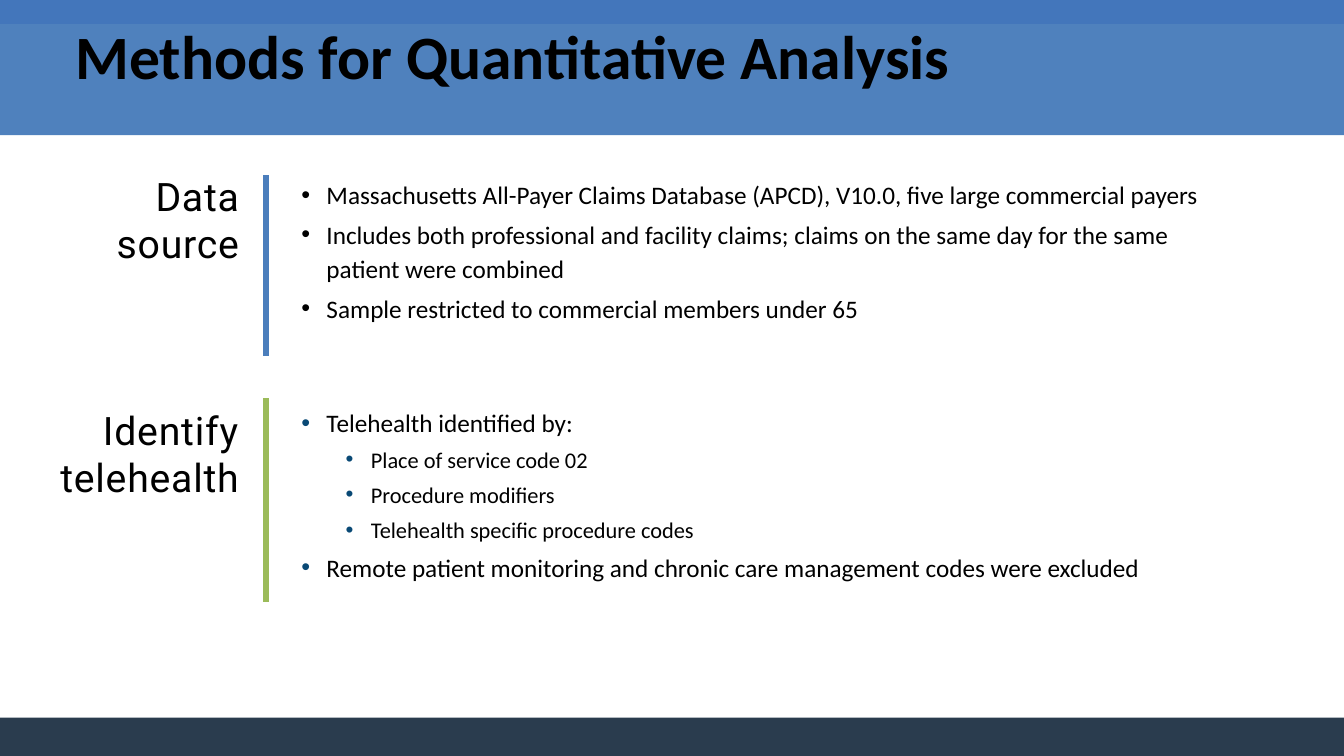
from dataclasses import dataclass

from lxml.etree import SubElement
from pptx import Presentation
from pptx.dml.color import RGBColor
from pptx.enum.shapes import MSO_CONNECTOR, MSO_SHAPE
from pptx.enum.text import MSO_ANCHOR, PP_ALIGN
from pptx.oxml.ns import qn
from pptx.util import Inches, Pt

SLIDE_WIDTH, SLIDE_HEIGHT = Inches(13.33), Inches(7.5)


@dataclass(frozen=True)
class Theme:
    top_band: str = "4376BB"
    title_band: str = "4F81BD"
    footer: str = "2A3C4E"
    text: str = "000000"
    bullet: str = "094975"
    source_rule: str = "4B7EBC"
    telehealth_rule: str = "9BBB59"
    body_font: str = "Calibri"
    label_font: str = "Roboto"
    title_size: int = 44
    label_size: int = 28
    body_sizes: tuple = (18, 16)
    rule_width: float = 4.5


THEME = Theme()
BODY_LEFT, BODY_WIDTH = 21.68, 70.1
RULE_X = 19.8
LABEL_RIGHT, LABEL_HEIGHT = 18.53, 13.87
BULLET_INDENTS = (0.25, 0.69)
BULLET_HANG = 0.25


def across(percent):
    return round(SLIDE_WIDTH * percent / 100)


def down(percent):
    return round(SLIDE_HEIGHT * percent / 100)


def add_band(slide, top, height, color):
    shape = slide.shapes.add_shape(
        MSO_SHAPE.RECTANGLE, 0, down(top), SLIDE_WIDTH, down(height))
    shape.shadow.inherit = False
    shape.fill.solid()
    shape.fill.fore_color.rgb = RGBColor.from_string(color)
    shape.line.fill.background()


def add_text_frame(slide, left, top, width, height):
    """Add a wrapping text box placed in percent of the slide."""
    box = slide.shapes.add_textbox(
        across(left), down(top), across(width), down(height))
    box.text_frame.word_wrap = True
    return box.text_frame


def add_paragraphs(frame, texts, font_name, size, bold=False):
    """Write one run per paragraph and return the paragraphs."""
    for index, text in enumerate(texts):
        paragraph = frame.add_paragraph() if index else frame.paragraphs[0]
        run = paragraph.add_run()
        run.text = text
        run.font.name = font_name
        run.font.size = Pt(size)
        run.font.bold = bold
        run.font.color.rgb = RGBColor.from_string(THEME.text)
    return frame.paragraphs


def add_title(slide, text):
    frame = add_text_frame(slide, 4.88, 0.8, 90, 12.8)
    frame.vertical_anchor = MSO_ANCHOR.MIDDLE
    add_paragraphs(frame, [text], THEME.body_font, THEME.title_size, bold=True)


def add_label(slide, left, top, lines):
    frame = add_text_frame(slide, left, top, LABEL_RIGHT - left, LABEL_HEIGHT)
    for paragraph in add_paragraphs(
            frame, lines, THEME.label_font, THEME.label_size):
        paragraph.alignment = PP_ALIGN.RIGHT
        paragraph.runs[0].font._element.set("spc", "60")


def add_rule(slide, top, bottom, color):
    rule = slide.shapes.add_connector(
        MSO_CONNECTOR.STRAIGHT,
        across(RULE_X), down(top), across(RULE_X), down(bottom))
    rule.line.color.rgb = RGBColor.from_string(color)
    rule.line.width = Pt(THEME.rule_width)
    SubElement(rule._element.spPr, qn("a:effectLst"))


def set_bullet(paragraph, level, color):
    properties = paragraph._p.get_or_add_pPr()
    properties.set("marL", str(Inches(BULLET_INDENTS[level])))
    properties.set("indent", str(-Inches(BULLET_HANG)))
    bullet_color = SubElement(properties, qn("a:buClr"))
    SubElement(bullet_color, qn("a:srgbClr"), val=color)
    SubElement(properties, qn("a:buFont"), typeface="Arial")
    SubElement(properties, qn("a:buChar"), char="•")


def add_bullets(slide, top, height, items, bullet_color):
    """Add a list of (level, text) items."""
    frame = add_text_frame(slide, BODY_LEFT, top, BODY_WIDTH, height)
    paragraphs = add_paragraphs(
        frame, [text for _, text in items], THEME.body_font, THEME.body_sizes[0])
    for paragraph, (level, _) in zip(paragraphs, items):
        size = THEME.body_sizes[level]
        paragraph.level = level
        paragraph.line_spacing = 1.14
        paragraph.space_before = Pt(size * 0.2)
        paragraph.runs[0].font.size = Pt(size)
        set_bullet(paragraph, level, bullet_color)


def main():
    presentation = Presentation()
    presentation.slide_width = SLIDE_WIDTH
    presentation.slide_height = SLIDE_HEIGHT
    slide = presentation.slides.add_slide(presentation.slide_layouts[6])

    add_band(slide, 0, 14.27, THEME.top_band)
    add_band(slide, 94.93, 5.07, THEME.footer)
    add_band(slide, 3.2, 14.67, THEME.title_band)
    add_title(slide, "Methods for Quantitative Analysis")

    add_label(slide, 5.4, 22.13, ["Data", "source"])
    add_rule(slide, 23.2, 47.07, THEME.source_rule)
    add_bullets(slide, 22.53, 22.27, [
        (0, "Massachusetts All-Payer Claims Database (APCD), V10.0, "
            "five large commercial payers"),
        (0, "Includes both professional and facility claims; claims on the "
            "same day for the same patient were combined"),
        (0, "Sample restricted to commercial members under 65"),
    ], THEME.text)

    add_label(slide, 2.18, 53.07, ["Identify telehealth"])
    add_rule(slide, 52.67, 79.6, THEME.telehealth_rule)
    add_bullets(slide, 52.67, 36.67, [
        (0, "Telehealth identified by:"),
        (1, "Place of service code 02"),
        (1, "Procedure modifiers"),
        (1, "Telehealth specific procedure codes"),
        (0, "Remote patient monitoring and chronic care management codes "
            "were excluded"),
    ], THEME.bullet)

    presentation.save("out.pptx")


if __name__ == "__main__":
    main()
